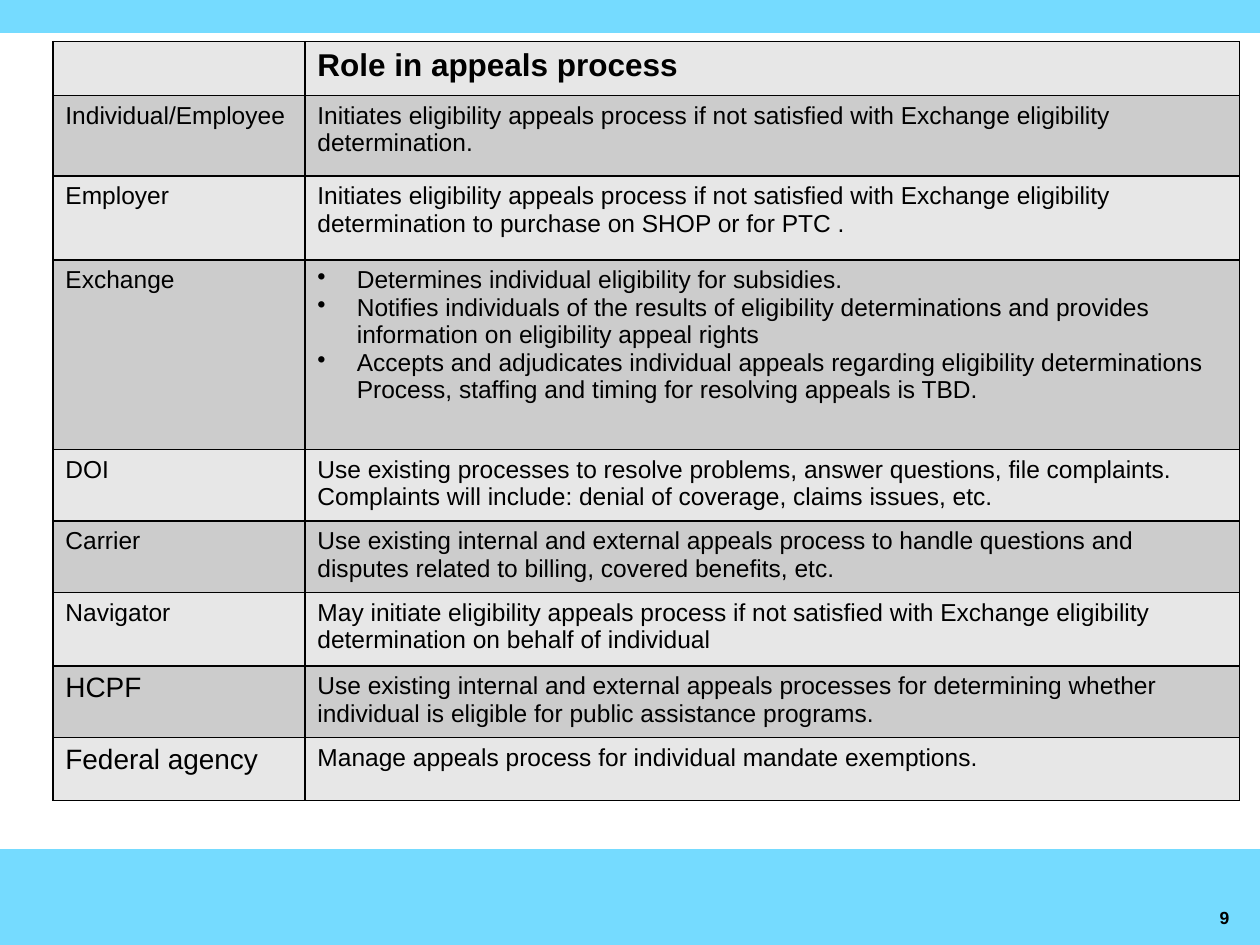
from lxml import etree
from pptx import Presentation
from pptx.dml.color import RGBColor
from pptx.enum.shapes import MSO_SHAPE
from pptx.oxml.ns import qn
from pptx.util import Pt

RECTANGLE = MSO_SHAPE.RECTANGLE

THEME = {
    "font": "Arial",
    "ink": "000000",
    "band": "75DBFF",
    "rows": ("E7E7E7", "CCCCCC"),
    "heading": 18,
    "label": 16,
    "body": 14,
    "number": 10,
}
PAGE_SIZE = (720, 540)
BANDS = [(0, 0, 720, 18), (0, 486, 720, 54)]
NUMBER_BOX = (689.8, 514.8, 26.6, 19.4)
TABLE_ORIGIN = (30.2, 23.8)
COLUMN_WIDTHS = (144, 534.2)
BULLET_INDENT = 22.5

ROWS = [
    (30.9, "", ["Role in appeals process"]),
    (45.9, "Individual/Employee", [
        "Initiates eligibility appeals process if not satisfied with Exchange eligibility determination."]),
    (48, "Employer", [
        "Initiates eligibility appeals process if not satisfied with Exchange eligibility "
        "determination to purchase on SHOP or for PTC ."]),
    (108.3, "Exchange", [
        "Determines individual eligibility for subsidies.",
        "Notifies individuals of the results of eligibility determinations and provides "
        "information on eligibility appeal rights",
        "Accepts and adjudicates individual appeals regarding eligibility determinations "
        "Process, staffing and timing for resolving appeals is TBD."]),
    (40.6, "DOI", [
        "Use existing processes to resolve problems, answer questions, file complaints. "
        "Complaints will include: denial of coverage, claims issues, etc."]),
    (40.9, "Carrier", [
        "Use existing internal and external appeals process to handle questions and "
        "disputes related to billing, covered benefits, etc."]),
    (42, "Navigator", [
        "May initiate eligibility appeals process if not satisfied with Exchange eligibility "
        "determination on behalf of individual"]),
    (40.9, "HCPF", [
        "Use existing internal and external appeals processes for determining whether "
        "individual is eligible for public assistance programs."]),
    (36, "Federal agency", ["Manage appeals process for individual mandate exemptions."]),
]
LARGE_LABELS = ("HCPF", "Federal agency")


def color(name):
    return RGBColor.from_string(name)


def points(values):
    return [Pt(value) for value in values]


def write(para, text, size, bold=False):
    span = para.add_run()
    span.text = text
    formats = {"name": THEME["font"], "size": Pt(THEME[size]), "bold": bold}
    for name, value in formats.items():
        setattr(span.font, name, value)
    span.font.color.rgb = color(THEME["ink"])


def add_bullet(para):
    properties = para._p.get_or_add_pPr()
    properties.set("marL", str(Pt(BULLET_INDENT)))
    properties.set("indent", str(-Pt(BULLET_INDENT)))
    etree.SubElement(properties, qn("a:buChar")).set("char", "•")


def add_borders(cell):
    properties = cell._tc.get_or_add_tcPr()
    for index, side in enumerate(("a:lnL", "a:lnR", "a:lnT", "a:lnB")):
        line = etree.Element(qn(side), w=str(Pt(1)))
        fill = etree.SubElement(line, qn("a:solidFill"))
        etree.SubElement(fill, qn("a:srgbClr")).set("val", THEME["ink"])
        properties.insert(index, line)


def fill_cell(cell, texts, size, bold, shade):
    for index, text in enumerate(texts):
        frame = cell.text_frame
        para = frame.add_paragraph() if index else frame.paragraphs[0]
        if len(texts) > 1:
            add_bullet(para)
        if text:
            write(para, text, size, bold)
    cell.fill.solid()
    cell.fill.fore_color.rgb = color(shade)
    add_borders(cell)


def add_bands(page):
    for place in BANDS:
        band = page.shapes.add_shape(RECTANGLE, *points(place))
        band.shadow.inherit = False
        band.fill.solid()
        band.fill.fore_color.rgb = color(THEME["band"])
        band.line.color.rgb = color(THEME["band"])
        band.line.width = Pt(2)


def add_number(page):
    box = page.shapes.add_textbox(*points(NUMBER_BOX))
    box.text_frame.word_wrap = False
    write(box.text_frame.paragraphs[0], "9", "number", True)


def add_roles(page):
    size = (sum(COLUMN_WIDTHS), sum(row[0] for row in ROWS))
    table = page.shapes.add_table(
        len(ROWS), len(COLUMN_WIDTHS), *points(TABLE_ORIGIN + size)).table
    table.horz_banding = False
    for column, width in zip(table.columns, COLUMN_WIDTHS):
        column.width = Pt(width)
    for index, (height, label, roles) in enumerate(ROWS):
        table.rows[index].height = Pt(height)
        shade = THEME["rows"][index % 2]
        heading = index == 0
        label_size = "label" if label in LARGE_LABELS else "body"
        fill_cell(table.cell(index, 0), [label], label_size, False, shade)
        fill_cell(table.cell(index, 1), roles, "heading" if heading else "body", heading, shade)


def main():
    deck = Presentation()
    deck.slide_width, deck.slide_height = points(PAGE_SIZE)
    page = deck.slides.add_slide(deck.slide_layouts[6])
    add_bands(page)
    add_number(page)
    add_roles(page)
    deck.save("out.pptx")


if __name__ == "__main__":
    main()
